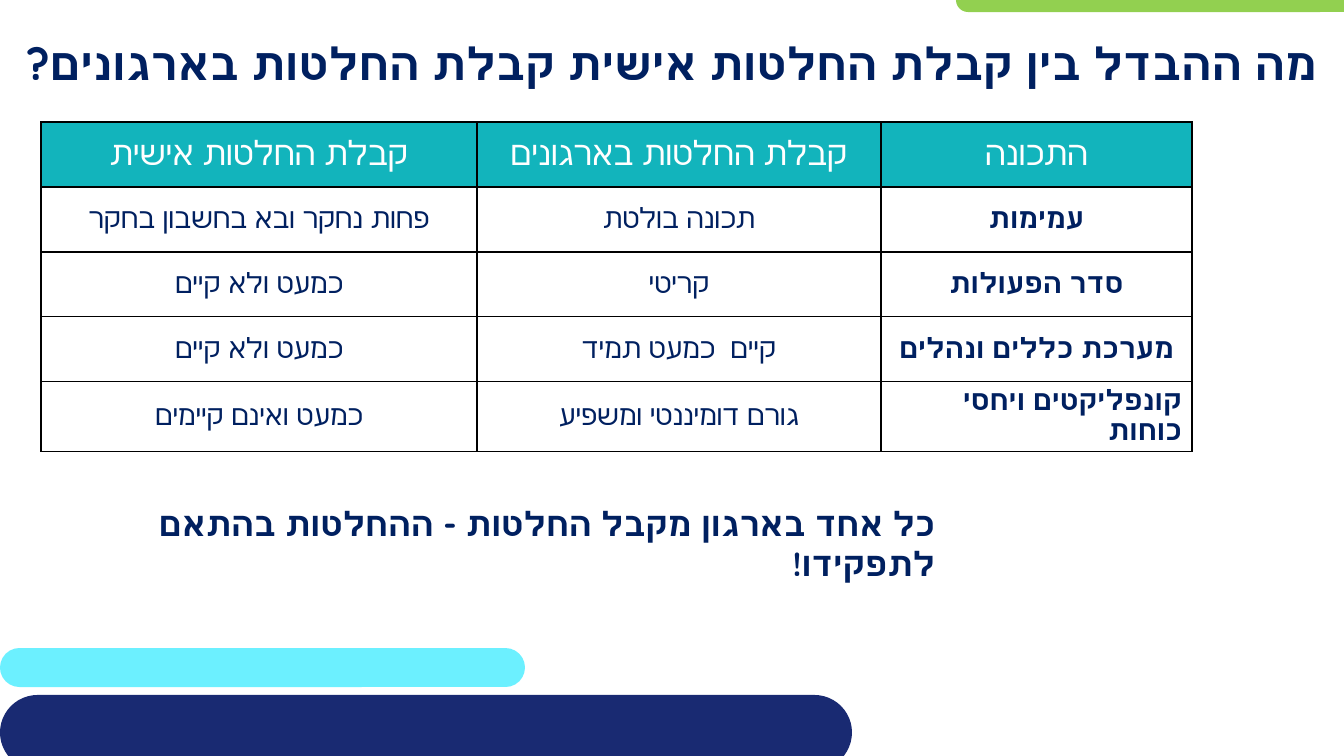
from dataclasses import dataclass

from lxml import etree
from pptx import Presentation
from pptx import util as u
from pptx.dml.color import RGBColor
from pptx.enum import shapes, text
from pptx.oxml.ns import qn

EMU_PER_PX = 914400 / 100.8
FONT = "Quicksand"
COLORS = {
    "navy": "002060",
    "white": "FFFFFF",
    "teal": "12B4BC",
    "cyan": "6CF0FF",
    "green": "92D050",
    "deep_blue": "192A72",
    "black": "000000",
}
CENTER, RIGHT = text.PP_ALIGN.CENTER, text.PP_ALIGN.RIGHT


@dataclass
class Box:
    left: int
    top: int
    width: int
    height: int

    def emu(self) -> list[int]:
        return [px(n) for n in (self.left, self.top, self.width, self.height)]


@dataclass
class Bar:
    box: Box
    color: str


@dataclass
class Style:
    size: int
    color: str = "navy"
    bold: bool = False
    align: text.PP_ALIGN = CENTER


@dataclass
class Caption:
    box: Box
    words: str
    style: Style
    anchor: text.MSO_ANCHOR


BARS = [
    Bar(Box(0, 648, 525, 39), "cyan"),
    Bar(Box(956, -12, 585, 24), "green"),
    Bar(Box(0, 695, 852, 75), "deep_blue"),
]

CAPTIONS = [
    Caption(Box(0, 23, 1344, 80), "מה ההבדל בין קבלת החלטות אישית קבלת החלטות בארגונים?",
            Style(32, bold=True), text.MSO_ANCHOR.MIDDLE),
    Caption(Box(52, 498, 893, 50), "כל אחד בארגון מקבל החלטות - ההחלטות בהתאם לתפקידו!",
            Style(24, bold=True, align=RIGHT), text.MSO_ANCHOR.TOP),
]

TABLE_BOX = Box(41, 122, 1151, 325)
COLUMN_WIDTHS = [436, 404, 311]
ROWS = [
    ["קבלת החלטות אישית", "קבלת החלטות בארגונים", "התכונה"],
    ["פחות נחקר ובא בחשבון בחקר", "תכונה בולטת", "עמימות"],
    ["כמעט ולא קיים", "קריטי", "סדר הפעולות"],
    ["כמעט ולא קיים", "קיים  כמעט תמיד", "מערכת כללים ונהלים"],
    ["כמעט ואינם קיימים", "גורם דומיננטי ומשפיע", "קונפליקטים ויחסי כוחות"],
]


def px(length: int) -> int:
    return round(length * EMU_PER_PX)


def rgb(name: str) -> RGBColor:
    return RGBColor.from_string(COLORS[name])


def write(frame, words: str, style: Style) -> None:
    """Fill a text frame with one right-to-left paragraph."""
    frame.text = words
    paragraph = frame.paragraphs[0]
    paragraph.alignment = style.align
    paragraph._p.get_or_add_pPr().set("rtl", "1")
    for run in paragraph.runs:
        run.font.name = FONT
        run.font.size = u.Pt(style.size)
        run.font.bold = style.bold
        run.font.color.rgb = rgb(style.color)
        # Hebrew takes its typeface from the complex-script font
        etree.SubElement(run._r.get_or_add_rPr(), qn("a:cs"), typeface=FONT)


def add_bar(slide, bar: Bar) -> None:
    shape = slide.shapes.add_shape(shapes.MSO_SHAPE.ROUNDED_RECTANGLE, *bar.box.emu())
    shape.adjustments[0] = 0.5
    shape.shadow.inherit = False
    shape.fill.solid()
    shape.fill.fore_color.rgb = rgb(bar.color)
    shape.line.fill.background()


def add_caption(slide, caption: Caption) -> None:
    frame = slide.shapes.add_textbox(*caption.box.emu()).text_frame
    frame.word_wrap = True
    frame.vertical_anchor = caption.anchor
    write(frame, caption.words, caption.style)


def add_borders(cell) -> None:
    properties = cell._tc.get_or_add_tcPr()
    for index, side in enumerate(("a:lnL", "a:lnR", "a:lnT", "a:lnB")):
        line = etree.Element(qn(side), w=str(u.Pt(1)))
        fill = etree.SubElement(line, qn("a:solidFill"))
        etree.SubElement(fill, qn("a:srgbClr"), val=COLORS["black"])
        properties.insert(index, line)


def cell_style(row: int, column: int) -> Style:
    if row == 0:
        return Style(24, "white")
    is_trait = column == len(COLUMN_WIDTHS) - 1
    is_wrapped = is_trait and row == len(ROWS) - 1
    return Style(20, bold=is_trait, align=RIGHT if is_wrapped else CENTER)


def add_comparison(slide) -> None:
    table = slide.shapes.add_table(len(ROWS), len(COLUMN_WIDTHS), *TABLE_BOX.emu()).table
    table.first_row = table.horz_banding = False
    for column, width in zip(table.columns, COLUMN_WIDTHS):
        column.width = px(width)
    for row, entries in enumerate(ROWS):
        for column, words in enumerate(entries):
            cell = table.cell(row, column)
            cell.vertical_anchor = text.MSO_ANCHOR.MIDDLE
            if row == 0:
                cell.fill.solid()
                cell.fill.fore_color.rgb = rgb("teal")
            else:
                cell.fill.background()
            add_borders(cell)
            write(cell.text_frame, words, cell_style(row, column))
            cell.text_frame.paragraphs[0].line_spacing = 0.85


def main() -> None:
    presentation = Presentation()
    presentation.slide_width, presentation.slide_height = px(1344), px(756)
    slide = presentation.slides.add_slide(presentation.slide_layouts[6])

    # Decorative bars at the edges
    for bar in BARS:
        add_bar(slide, bar)

    # Title, comparison table and conclusion
    add_comparison(slide)
    for caption in CAPTIONS:
        add_caption(slide, caption)

    presentation.save("out.pptx")


if __name__ == "__main__":
    main()
